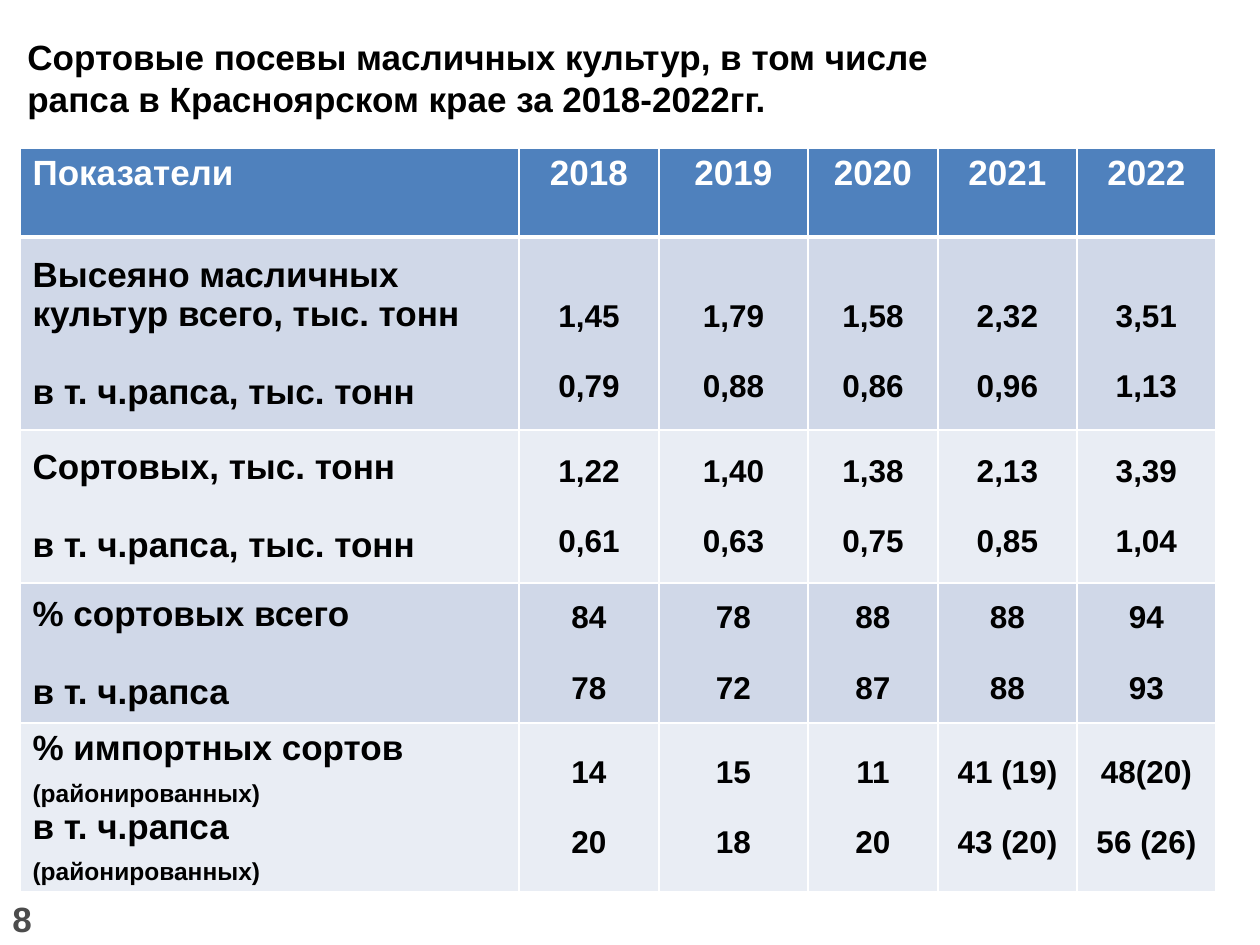
import pptx
import pptx.util
import pptx.dml.color
import pptx.enum.text
import pptx.oxml
import pptx.oxml.ns

PX = 914400 // 126
Pt = pptx.util.Pt
ALIGN = pptx.enum.text.PP_ALIGN
ANCHOR = pptx.enum.text.MSO_ANCHOR


def color(code):
    return pptx.dml.color.RGBColor.from_string(code)


def write(frame, text, size=20, ink="000000", align=ALIGN.LEFT, gap=0, line=None, note_size=14):
    """Each item of text is a paragraph; what follows a line break is a small note."""
    frame.word_wrap = True
    for index, words in enumerate(text):
        paragraph = frame.paragraphs[0] if index == 0 else frame.add_paragraph()
        paragraph.alignment = align
        paragraph.space_before = Pt(gap if index else 0)
        if line:
            paragraph.line_spacing = Pt(line)
        for part, piece in enumerate(words.split("\n")):
            if part:
                paragraph.add_line_break()
            run = paragraph.add_run()
            run.text = piece
            run.font.name = "Arial"
            run.font.size = Pt(note_size if part else size)
            run.font.bold = True
            run.font.color.rgb = color(ink)


deck = pptx.Presentation()
deck.slide_width, deck.slide_height = 1260 * PX, 945 * PX
slide = deck.slides.add_slide(deck.slide_layouts[6])

# Title and page number
captions = [
    ("Сортовые посевы масличных культур, в том числе рапса в Красноярском крае за 2018-2022гг.",
     (15, 26, 994, 103), "000000", 24),
    ("8", (0, 903, 74, 30), "4C4C4C", None),
]
for words, place, ink, line in captions:
    frame = slide.shapes.add_textbox(*[n * PX for n in place]).text_frame
    frame.vertical_anchor = ANCHOR.MIDDLE
    write(frame, [words], ink=ink, line=line)

# Table content: label paragraphs, then total and rapeseed values by year
years = ["2018", "2019", "2020", "2021", "2022"]
indicators = [
    (["Высеяно масличных культур всего, тыс. тонн", "в т. ч.рапса, тыс. тонн"],
     ["1,45", "1,79", "1,58", "2,32", "3,51"], ["0,79", "0,88", "0,86", "0,96", "1,13"]),
    (["Сортовых, тыс. тонн", "в т. ч.рапса, тыс. тонн"],
     ["1,22", "1,40", "1,38", "2,13", "3,39"], ["0,61", "0,63", "0,75", "0,85", "1,04"]),
    (["% сортовых всего", "в т. ч.рапса"],
     ["84", "78", "88", "88", "94"], ["78", "72", "87", "88", "93"]),
    (["% импортных сортов\n(районированных)", "в т. ч.рапса\n(районированных)"],
     ["14", "15", "11", "41 (19)", "48(20)"], ["20", "18", "20", "43 (20)", "56 (26)"]),
]
column_widths = [499, 140, 149, 130, 139, 139]
row_heights = [89, 193, 153, 140, 168]

table = slide.shapes.add_table(
    len(row_heights), len(column_widths), 20 * PX, 148 * PX,
    sum(column_widths) * PX, sum(row_heights) * PX).table
for column, width in zip(table.columns, column_widths):
    column.width = width * PX
for row, height in zip(table.rows, row_heights):
    row.height = height * PX

# Header row
for c, words in enumerate(["Показатели"] + years):
    write(table.cell(0, c).text_frame, [words], ink="FFFFFF",
          align=ALIGN.CENTER if c else ALIGN.LEFT)

# Indicator rows
for r, (labels, totals, rapeseed) in enumerate(indicators, 1):
    has_notes = "\n" in labels[0]
    write(table.cell(r, 0).text_frame, labels, line=22.3, gap=0 if has_notes else 22.3)
    for c, pair in enumerate(zip(totals, rapeseed), 1):
        cell = table.cell(r, c)
        write(cell.text_frame, pair, size=18, align=ALIGN.CENTER, gap=20)
        if r == 1:  # values sit level with the second line of the label
            cell.margin_top = 42 * PX

# Fills and white borders
for r, row in enumerate(table.rows):
    for cell in row.cells:
        cell.vertical_anchor = ANCHOR.MIDDLE if r else ANCHOR.TOP
        cell.fill.solid()
        cell.fill.fore_color.rgb = color(["E9EDF4", "D0D8E8"][r % 2] if r else "4F81BD")
        for order, side in enumerate("LRTB"):
            heavy = (r, side) in [(0, "B"), (1, "T")]
            border = pptx.oxml.parse_xml(
                f'<a:ln{side} {pptx.oxml.ns.nsdecls("a")} w="{Pt(3 if heavy else 1)}">'
                '<a:solidFill><a:srgbClr val="FFFFFF"/></a:solidFill>'
                f'</a:ln{side}>')
            cell._tc.get_or_add_tcPr().insert(order, border)

deck.save("out.pptx")
